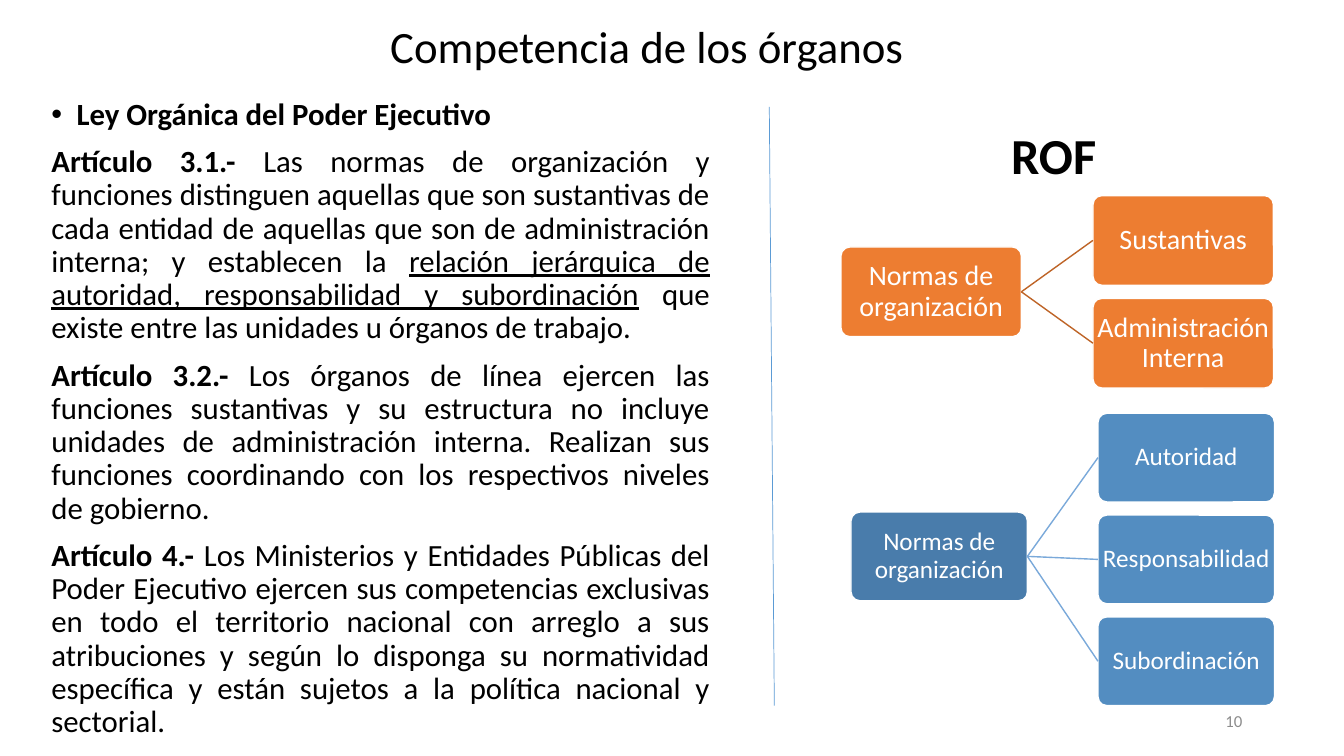
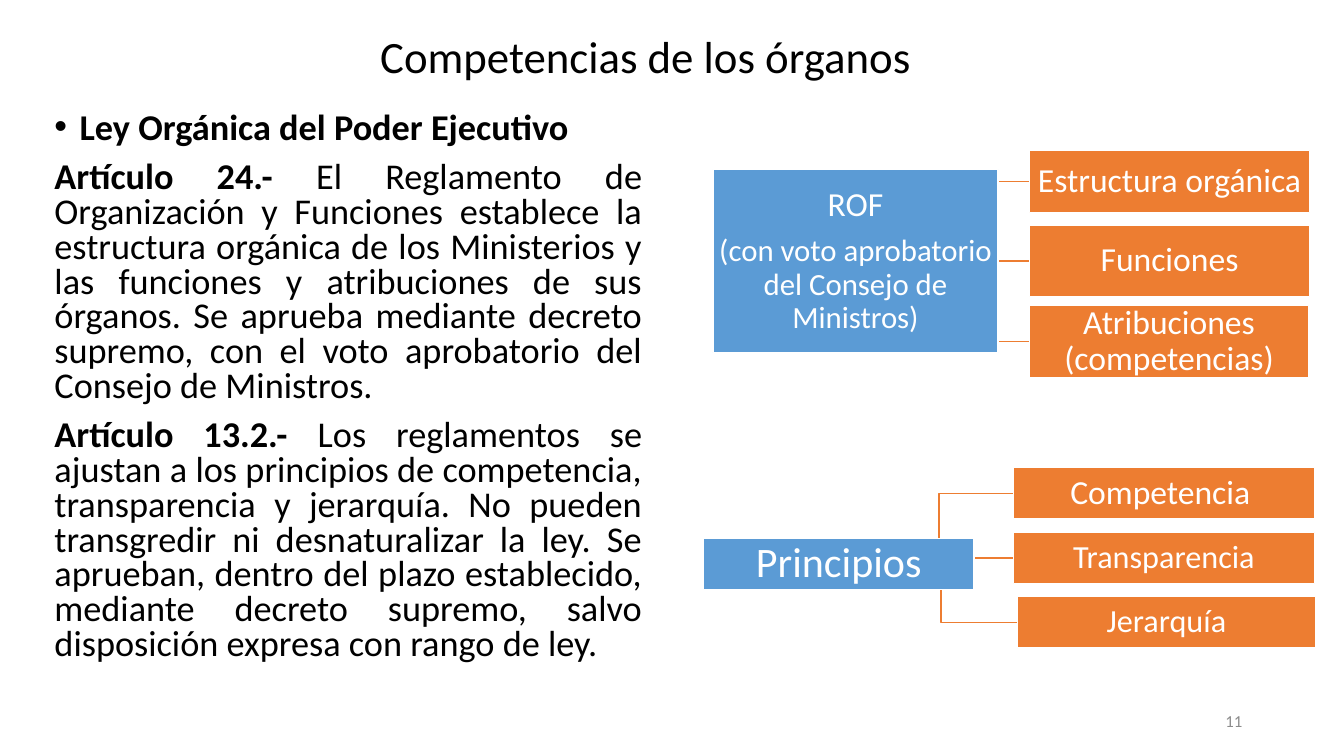
from dataclasses import dataclass

from lxml.etree import SubElement
from pptx import Presentation
from pptx.dml.color import RGBColor
from pptx.enum.shapes import MSO_CONNECTOR as Link, MSO_SHAPE as Preset
from pptx.enum.text import MSO_ANCHOR as Anchor, MSO_AUTO_SIZE as AutoSize, PP_ALIGN as Align
from pptx.oxml.ns import qn
from pptx.util import Inches, Pt

FONT = "Calibri"
BLACK, WHITE, GREY = "000000", "FFFFFF", "8C8C8C"
ORANGE, DARK_ORANGE = "ED7D31", "BE6427"
BLUE, DEEP_BLUE, MID_BLUE, PALE_BLUE = "5B9BD5", "497CAB", "538DC1", "7AA9DA"
FIRST_PAGE = 10


@dataclass(frozen=True)
class Area:
    left: float
    top: float
    width: float
    height: float

    def lengths(self) -> list:
        return [Inches(value) for value in (self.left, self.top, self.width, self.height)]


@dataclass(frozen=True)
class Span:
    text: str
    bold: bool = False
    underline: bool = False


@dataclass(frozen=True)
class Node:
    text: str
    area: Area
    sizes: tuple[float, ...]
    fill: str


@dataclass(frozen=True)
class Tree:
    root: Node
    children: list[Node]
    line: str
    elbow_start: tuple[float, float] | None = None


@dataclass(frozen=True)
class Page:
    title: str
    title_area: Area
    body_area: Area
    body_size: float
    line_spacing: float
    articles: list[list[Span]]
    trees: list[Tree]


def column(texts: list[str], first: Area, step: float, size: float, fill: str) -> list[Node]:
    """Nodes of one size, stacked at an equal step."""
    return [
        Node(text, Area(first.left, first.top + step * index, first.width, first.height), (size,), fill)
        for index, text in enumerate(texts)
    ]


def color(value: str) -> RGBColor:
    return RGBColor.from_string(value)


def format_run(run, size: float, tint: str, bold: bool = False, underline: bool = False) -> None:
    run.font.name = FONT
    run.font.size = Pt(size)
    run.font.color.rgb = color(tint)
    run.font.bold = bold
    run.font.underline = underline


def set_bullet(para, bulleted: bool) -> None:
    properties = para._p.get_or_add_pPr()
    margin = Inches(0.25) if bulleted else 0
    properties.set("marL", str(margin))
    properties.set("indent", str(-margin))
    if bulleted:
        SubElement(properties, qn("a:buChar")).set("char", "•")
    else:
        SubElement(properties, qn("a:buNone"))


def place(shape, area: Area) -> None:
    shape.left, shape.top, shape.width, shape.height = area.lengths()


def add_title(slide, page: Page) -> None:
    title = slide.shapes.title
    place(title, page.title_area)
    frame = title.text_frame
    frame.text = page.title
    frame.auto_size = AutoSize.NONE
    frame.vertical_anchor = Anchor.MIDDLE
    para = frame.paragraphs[0]
    para.alignment = Align.LEFT
    para.line_spacing = 0.9
    format_run(para.runs[0], 32, BLACK)


def add_body(slide, page: Page) -> None:
    body = slide.placeholders[1]
    place(body, page.body_area)
    frame = body.text_frame
    frame.auto_size = AutoSize.NONE
    frame.vertical_anchor = Anchor.TOP
    heading = [Span("Ley Orgánica del Poder Ejecutivo", bold=True)]
    for index, spans in enumerate([heading, *page.articles]):
        para = frame.add_paragraph() if index else frame.paragraphs[0]
        para.alignment = Align.JUSTIFY
        para.line_spacing = page.line_spacing
        para.space_before = Pt(10)
        set_bullet(para, bulleted=index == 0)
        for span in spans:
            run = para.add_run()
            run.text = span.text
            format_run(run, page.body_size, BLACK, span.bold, span.underline)


def add_label(slide, text: str, area: Area, size: float, tint: str, bold: bool = False,
              align: Align = Align.LEFT, anchor: Anchor = Anchor.TOP) -> None:
    box = slide.shapes.add_textbox(*area.lengths())
    frame = box.text_frame
    frame.word_wrap = True
    frame.vertical_anchor = anchor
    frame.text = text
    frame.paragraphs[0].alignment = align
    format_run(frame.paragraphs[0].runs[0], size, tint, bold)


def add_line(slide, kind: Link, start: tuple[float, float], end: tuple[float, float],
             tint: str, width: float = 1):
    line = slide.shapes.add_connector(kind, *(Inches(value) for value in (*start, *end)))
    line.line.color.rgb = color(tint)
    line.line.width = Pt(width)
    SubElement(line.element.spPr, qn("a:effectLst"))
    return line


def add_node(slide, node: Node, preset: Preset, inset: float):
    box = slide.shapes.add_shape(preset, *node.area.lengths())
    if preset == Preset.ROUNDED_RECTANGLE:
        box.adjustments[0] = 0.1
    box.shadow.inherit = False
    box.fill.solid()
    box.fill.fore_color.rgb = color(node.fill)
    box.line.color.rgb = color(WHITE)
    box.line.width = Pt(1)
    frame = box.text_frame
    frame.word_wrap = True
    frame.vertical_anchor = Anchor.MIDDLE
    frame.margin_left = frame.margin_right = frame.margin_top = frame.margin_bottom = Inches(inset)
    frame.text = node.text
    for para, size in zip(frame.paragraphs, node.sizes):
        para.alignment = Align.CENTER
        para.line_spacing = 0.9
        format_run(para.runs[0], size, WHITE)
    for para in frame.paragraphs[:-1]:
        para.space_after = Pt(8.4)
    return box


def add_elbow_tree(slide, tree: Tree) -> None:
    """Square boxes over elbow lines that leave from inside the root."""
    for child in tree.children:
        end = (child.area.left, child.area.top + child.area.height / 2)
        add_line(slide, Link.ELBOW, tree.elbow_start, end, tree.line)
    for node in (tree.root, *tree.children):
        add_node(slide, node, Preset.RECTANGLE, 0.02)


def add_straight_tree(slide, tree: Tree) -> None:
    """Rounded boxes joined side to side by straight lines."""
    root = add_node(slide, tree.root, Preset.ROUNDED_RECTANGLE, 0.01)
    for child in tree.children:
        box = add_node(slide, child, Preset.ROUNDED_RECTANGLE, 0.01)
        line = add_line(slide, Link.STRAIGHT, (0, 0), (1, 1), tree.line)
        line.begin_connect(root, 3)
        line.end_connect(box, 1)


def add_page(deck, page: Page, number: int):
    slide = deck.slides.add_slide(deck.slide_layouts[1])
    add_title(slide, page)
    add_body(slide, page)
    for tree in page.trees:
        if tree.elbow_start:
            add_elbow_tree(slide, tree)
        else:
            add_straight_tree(slide, tree)
    add_label(slide, str(number), Area(9.42, 6.95, 3, 0.4), 12, GREY,
              align=Align.RIGHT, anchor=Anchor.MIDDLE)
    return slide


RULES_PAGE = Page(
    "Competencia de los órganos", Area(3.77, 0.17, 5.44, 0.63), Area(0.41, 0.93, 6.73, 6.44), 22, 0.9,
    [
        [
            Span("Artículo 3.1.- ", bold=True),
            Span("Las normas de organización y funciones distinguen aquellas que son sustantivas de cada "
                 "entidad de aquellas que son de administración interna; y establecen la "),
            Span("relación jerárquica de autoridad, responsabilidad y subordinación", underline=True),
            Span(" que existe entre las unidades u órganos de trabajo."),
        ],
        [
            Span("Artículo 3.2.- ", bold=True),
            Span("Los órganos de línea ejercen las funciones sustantivas y su estructura no incluye unidades "
                 "de administración interna. Realizan sus funciones coordinando con los respectivos niveles "
                 "de gobierno."),
        ],
        [
            Span("Artículo 4.- ", bold=True),
            Span("Los Ministerios y Entidades Públicas del Poder Ejecutivo ejercen sus competencias exclusivas "
                 "en todo el territorio nacional con arreglo a sus atribuciones y según lo disponga su "
                 "normatividad específica y están sujetos a la política nacional y sectorial."),
        ],
    ],
    [
        Tree(
            Node("Normas de organización", Area(8.34, 2.45, 1.79, 0.89), (20,), ORANGE),
            column(["Sustantivas", "Administración Interna"],
                   Area(10.84, 1.94, 1.79, 0.89), 1.02, 20, ORANGE),
            DARK_ORANGE,
        ),
        Tree(
            Node("Normas de organización", Area(8.44, 5.08, 1.75, 0.88), (18,), DEEP_BLUE),
            column(["Autoridad", "Responsabilidad", "Subordinación"],
                   Area(10.89, 4.1, 1.75, 0.88), 1.01, 18, MID_BLUE),
            PALE_BLUE,
        ),
    ],
)

PRINCIPLES_PAGE = Page(
    "Competencias de los órganos", Area(3.67, 0.31, 5.61, 0.56), Area(0.44, 1.07, 6.03, 6.04), 25.9, 0.8,
    [
        [
            Span("Artículo 24.- ", bold=True),
            Span("El Reglamento de Organización y Funciones establece la estructura orgánica de los Ministerios "
                 "y las funciones y atribuciones de sus órganos. Se aprueba mediante decreto supremo, con el "
                 "voto aprobatorio del Consejo de Ministros."),
        ],
        [
            Span("Artículo 13.2.- ", bold=True),
            Span("Los reglamentos se ajustan a los principios de competencia, transparencia y jerarquía. No "
                 "pueden transgredir ni desnaturalizar la ley. Se aprueban, dentro del plazo establecido, "
                 "mediante decreto supremo, salvo disposición expresa con rango de ley."),
        ],
    ],
    [
        Tree(
            Node("ROF\n(con voto aprobatorio del Consejo de Ministros)",
                 Area(7.07, 1.68, 2.83, 1.82), (24, 22), BLUE),
            [
                Node("Estructura orgánica", Area(10.21, 1.49, 2.78, 0.62), (24,), ORANGE),
                Node("Funciones", Area(10.21, 2.24, 2.78, 0.7), (24,), ORANGE),
                Node("Atribuciones (competencias)", Area(10.21, 3.03, 2.77, 0.72), (24,), ORANGE),
            ],
            ORANGE, (9.39, 2.6),
        ),
        Tree(
            Node("Principios", Area(6.98, 5.34, 2.68, 0.51), (30,), BLUE),
            [
                Node("Competencia ", Area(10.05, 4.64, 2.99, 0.51), (24,), ORANGE),
                Node("Transparencia", Area(10.05, 5.28, 2.99, 0.51), (23,), ORANGE),
                Node("Jerarquía", Area(10.09, 5.92, 2.96, 0.51), (23,), ORANGE),
            ],
            ORANGE, (8.58, 5.59),
        ),
    ],
)


def main() -> None:
    deck = Presentation()
    deck.slide_width, deck.slide_height = Inches(13.33), Inches(7.5)
    rules_slide = add_page(deck, RULES_PAGE, FIRST_PAGE)
    add_line(rules_slide, Link.STRAIGHT, (7.63, 1.06), (7.68, 7), BLUE, 0.5)
    add_label(rules_slide, "ROF", Area(9.93, 1.18, 1.11, 0.71), 36, BLACK, bold=True)
    add_page(deck, PRINCIPLES_PAGE, FIRST_PAGE + 1)
    deck.save("out.pptx")


if __name__ == "__main__":
    main()
